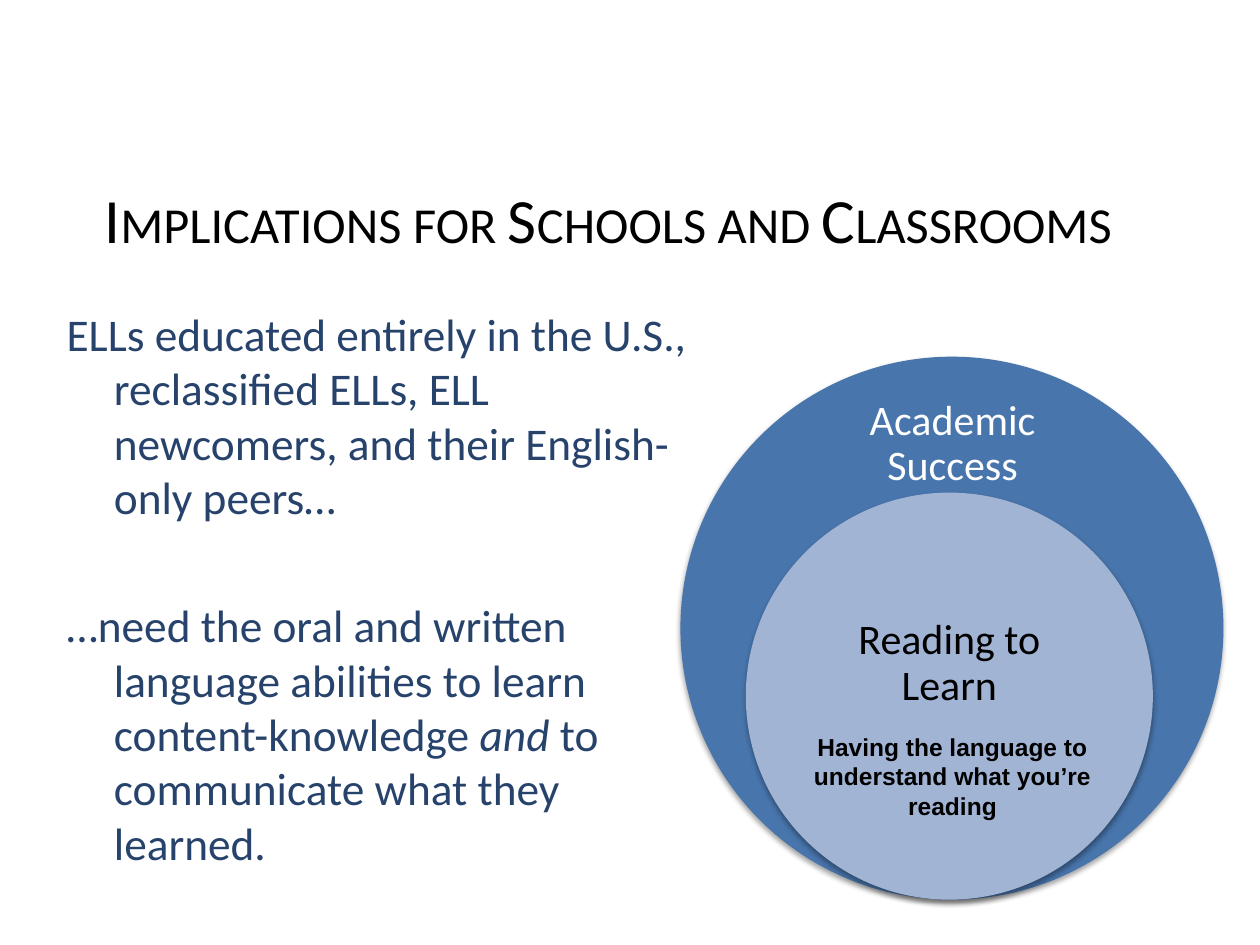
from dataclasses import dataclass

from lxml import etree
from pptx import Presentation
from pptx import util as u
from pptx.dml.color import RGBColor
from pptx.enum import shapes, text
from pptx.oxml.ns import qn


@dataclass(frozen=True)
class Theme:
    heading_font: str = "Calibri"
    caption_font: str = "Arial"
    black: str = "000000"
    white: str = "FFFFFF"
    navy: str = "27436C"
    outer_blue: str = "4875AC"
    inner_blue: str = "A2B4D4"
    title_size: float = 36
    body_size: float = 25.9
    label_size: float = 24
    caption_size: float = 14


@dataclass(frozen=True)
class Box:
    left: float
    top: float
    width: float
    height: float

    def lengths(self) -> list:
        return [u.Pt(n) for n in (self.left, self.top, self.width, self.height)]


@dataclass(frozen=True)
class Circle:
    left: float
    top: float
    diameter: float
    color: str


@dataclass(frozen=True)
class Label:
    words: str
    box: Box
    font: str
    size: float
    color: str
    bold: bool = False
    inset: float = 3.6
    line_spacing: float = 1.0
    anchor: text.MSO_ANCHOR = text.MSO_ANCHOR.TOP


THEME = Theme()

TITLE = "Implications for Schools and Classrooms"
TITLE_BOX = Box(52.5, 92.2, 619.2, 65.5)

# Each paragraph is a list of (words, italic) pieces
BODY = [
    [("ELLs educated entirely in the U.S., reclassified ELLs, ELL newcomers, "
      "and their English-only peers…", False)],
    [("…need the oral and written language abilities to learn content-knowledge ", False),
     ("and ", True),
     ("to communicate what they learned.", False)],
]
BODY_BOX = Box(31, 171.4, 386.6, 272.9)
BODY_INDENT = 27
BODY_GAP = 42

CIRCLES = [
    Circle(388.8, 203.8, 310.3, THEME.outer_blue),
    Circle(426.2, 281.5, 232.6, THEME.inner_blue),
]

LABELS = [
    Label("Academic Success", Box(463, 227.5, 162.7, 52.6), THEME.heading_font,
          THEME.label_size, THEME.white, inset=13.7, line_spacing=0.9,
          anchor=text.MSO_ANCHOR.MIDDLE),
    Label("Reading to Learn", Box(460.1, 339.8, 164.9, 116.6), THEME.heading_font,
          THEME.label_size, THEME.black, inset=13.7, line_spacing=0.9),
    Label("Having the language to understand what you’re reading",
          Box(436.3, 414.7, 216, 58.3), THEME.caption_font,
          THEME.caption_size, THEME.black, bold=True),
]


def style_font(font, name: str, size: float, color: str) -> None:
    font.name = name
    font.size = u.Pt(size)
    font.color.rgb = RGBColor.from_string(color)


def set_title(slide) -> None:
    title = slide.shapes.title
    title.left, title.top, title.width, title.height = TITLE_BOX.lengths()
    frame = title.text_frame
    frame.text = TITLE
    frame.auto_size = text.MSO_AUTO_SIZE.NONE
    frame.vertical_anchor = text.MSO_ANCHOR.MIDDLE
    paragraph = frame.paragraphs[0]
    paragraph.alignment = text.PP_ALIGN.LEFT
    run = paragraph.runs[0]
    style_font(run.font, THEME.heading_font, THEME.title_size, THEME.black)
    run._r.get_or_add_rPr().set("cap", "small")


def add_body(slide) -> None:
    frame = slide.shapes.add_textbox(*BODY_BOX.lengths()).text_frame
    frame.word_wrap = True
    for index, pieces in enumerate(BODY):
        paragraph = frame.add_paragraph() if index else frame.paragraphs[0]
        if index:
            paragraph.space_before = u.Pt(BODY_GAP)
        # Hanging indent
        properties = paragraph._p.get_or_add_pPr()
        properties.set("marL", str(u.Pt(BODY_INDENT)))
        properties.set("indent", str(-u.Pt(BODY_INDENT)))
        for words, italic in pieces:
            run = paragraph.add_run()
            run.text = words
            style_font(run.font, THEME.heading_font, THEME.body_size, THEME.navy)
            run.font.italic = italic


def add_circle(slide, circle: Circle) -> None:
    box = Box(circle.left, circle.top, circle.diameter, circle.diameter)
    shape = slide.shapes.add_shape(shapes.MSO_SHAPE.OVAL, *box.lengths())
    shape.fill.solid()
    shape.fill.fore_color.rgb = RGBColor.from_string(circle.color)
    shape.line.fill.background()
    # Soft shadow falling straight down
    shape.shadow.inherit = False
    effects = shape._element.spPr.find(qn("a:effectLst"))
    shadow = etree.SubElement(effects, qn("a:outerShdw"), blurRad=str(u.Pt(3.1)),
                              dist=str(u.Pt(1.8)), dir="5400000", rotWithShape="0")
    color = etree.SubElement(shadow, qn("a:srgbClr"), val=THEME.black)
    etree.SubElement(color, qn("a:alpha"), val="35000")


def add_label(slide, label: Label) -> None:
    frame = slide.shapes.add_textbox(*label.box.lengths()).text_frame
    frame.word_wrap = True
    frame.vertical_anchor = label.anchor
    frame.margin_top = frame.margin_bottom = u.Pt(label.inset)
    frame.margin_left = frame.margin_right = u.Pt(max(label.inset, 7.2))
    frame.text = label.words
    paragraph = frame.paragraphs[0]
    paragraph.alignment = text.PP_ALIGN.CENTER
    paragraph.line_spacing = label.line_spacing
    font = paragraph.runs[0].font
    style_font(font, label.font, label.size, label.color)
    font.bold = label.bold


def main() -> None:
    presentation = Presentation()
    presentation.slide_width, presentation.slide_height = u.Pt(720), u.Pt(540)
    title_only = presentation.slide_layouts.get_by_name("Title Only")
    slide = presentation.slides.add_slide(title_only)

    # Title and body text
    set_title(slide)
    add_body(slide)

    # Nested circles with their labels
    for circle in CIRCLES:
        add_circle(slide, circle)
    for label in LABELS:
        add_label(slide, label)

    presentation.save("out.pptx")


if __name__ == "__main__":
    main()
